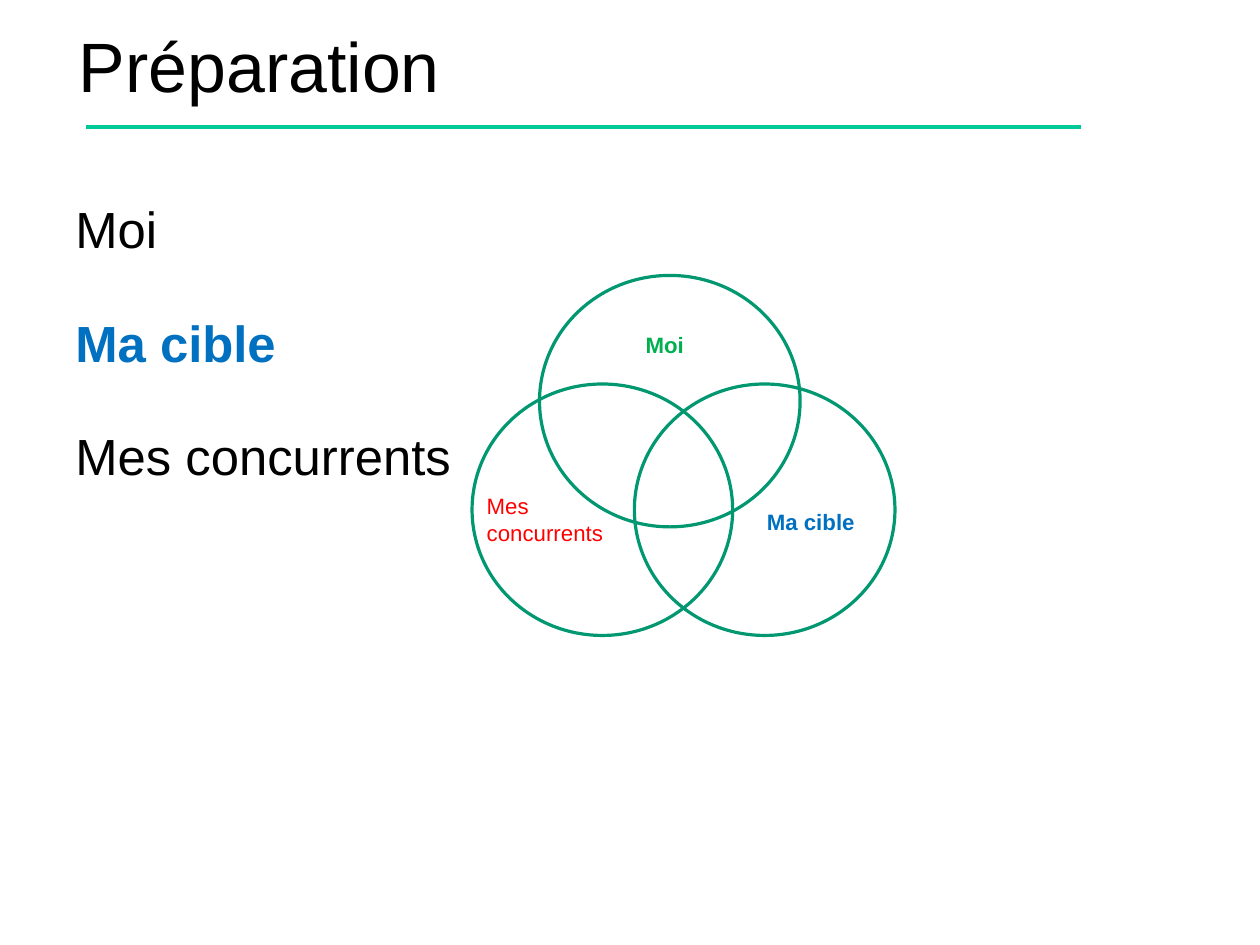
"""Slide "Préparation": three topics beside a three-circle Venn diagram."""
import pptx
import pptx.util
import pptx.dml.color
import pptx.enum.shapes
import pptx.enum.text
import pptx.oxml.ns
import lxml.etree

Inches = pptx.util.Inches
Pt = pptx.util.Pt
RGBColor = pptx.dml.color.RGBColor

BLACK = RGBColor(0x00, 0x00, 0x00)
BLUE = RGBColor(0x00, 0x70, 0xC0)
GREEN = RGBColor(0x00, 0xB0, 0x50)
RED = RGBColor(0xFF, 0x00, 0x00)
RULE_GREEN = RGBColor(0x00, 0xC8, 0x96)
CIRCLE_GREEN = RGBColor(0x00, 0x97, 0x71)
CM_PER_INCH = 2.54


def add_text_frame(left, top, width, height, inset_x=0, inset_y=0):
    frame = slide.shapes.add_textbox(
        Inches(left), Inches(top), Inches(width), Inches(height)).text_frame
    frame.word_wrap = True
    frame.margin_left = frame.margin_right = Inches(inset_x)
    frame.margin_top = frame.margin_bottom = Inches(inset_y)
    return frame


def write(paragraph, text, size, color, bold=False):
    paragraph.text = text
    font = paragraph.runs[0].font
    font.name = "Arial"
    font.size = Pt(size)
    font.bold = bold
    font.color.rgb = color


presentation = pptx.Presentation()
presentation.slide_width = Inches(28 / CM_PER_INCH)
presentation.slide_height = Inches(21 / CM_PER_INCH)
slide = presentation.slides.add_slide(presentation.slide_layouts[6])

title_rule = slide.shapes.add_connector(
    pptx.enum.shapes.MSO_CONNECTOR.STRAIGHT,
    Inches(0.75), Inches(1.11), Inches(9.46), Inches(1.11))
title_rule.line.color.rgb = RULE_GREEN
title_rule.line.width = Pt(2.25)
lxml.etree.SubElement(title_rule._element.spPr, pptx.oxml.ns.qn("a:effectLst"))

title = add_text_frame(0.69, -0.02, 9, 1.25)
title.vertical_anchor = pptx.enum.text.MSO_ANCHOR.MIDDLE
title.paragraphs[0].line_spacing = 0.93
write(title.paragraphs[0], "Préparation", 44, BLACK)

topics = add_text_frame(0.41, 1.75, 9, 4.95, inset_y=0.03)
for index, (topic, color, bold) in enumerate([
        ("Moi", BLACK, False),
        ("Ma cible", BLUE, True),
        ("Mes concurrents", BLACK, False)]):
    paragraph = topics.add_paragraph() if index else topics.paragraphs[0]
    properties = paragraph._p.get_or_add_pPr()
    properties.set("marL", str(Inches(0.5)))
    properties.set("indent", str(Inches(-0.25)))
    paragraph.line_spacing = 0.93
    if index:
        paragraph.space_before = Pt(35.6)
    write(paragraph, topic, 32, color, bold)

for left, top in [(4.72, 2.41), (5.55, 3.36), (4.13, 3.36)]:
    circle = slide.shapes.add_shape(
        pptx.enum.shapes.MSO_SHAPE.OVAL,
        Inches(left), Inches(top), Inches(2.28), Inches(2.2))
    circle.shadow.inherit = False
    circle.fill.background()
    circle.line.color.rgb = CIRCLE_GREEN
    circle.line.width = Pt(2)

for label, left, top, width, height, color, bold in [
        ("Moi", 5.55, 2.85, 1.09, 0.4, GREEN, True),
        ("Ma cible", 6.61, 4.4, 1.42, 0.34, BLUE, True),
        ("Mes concurrents", 4.16, 4.26, 1.5, 0.71, RED, False)]:
    circle_label = add_text_frame(left, top, width, height, 0.1, 0.05)
    write(circle_label.paragraphs[0], label, 14, color, bold)

presentation.save("out.pptx")
